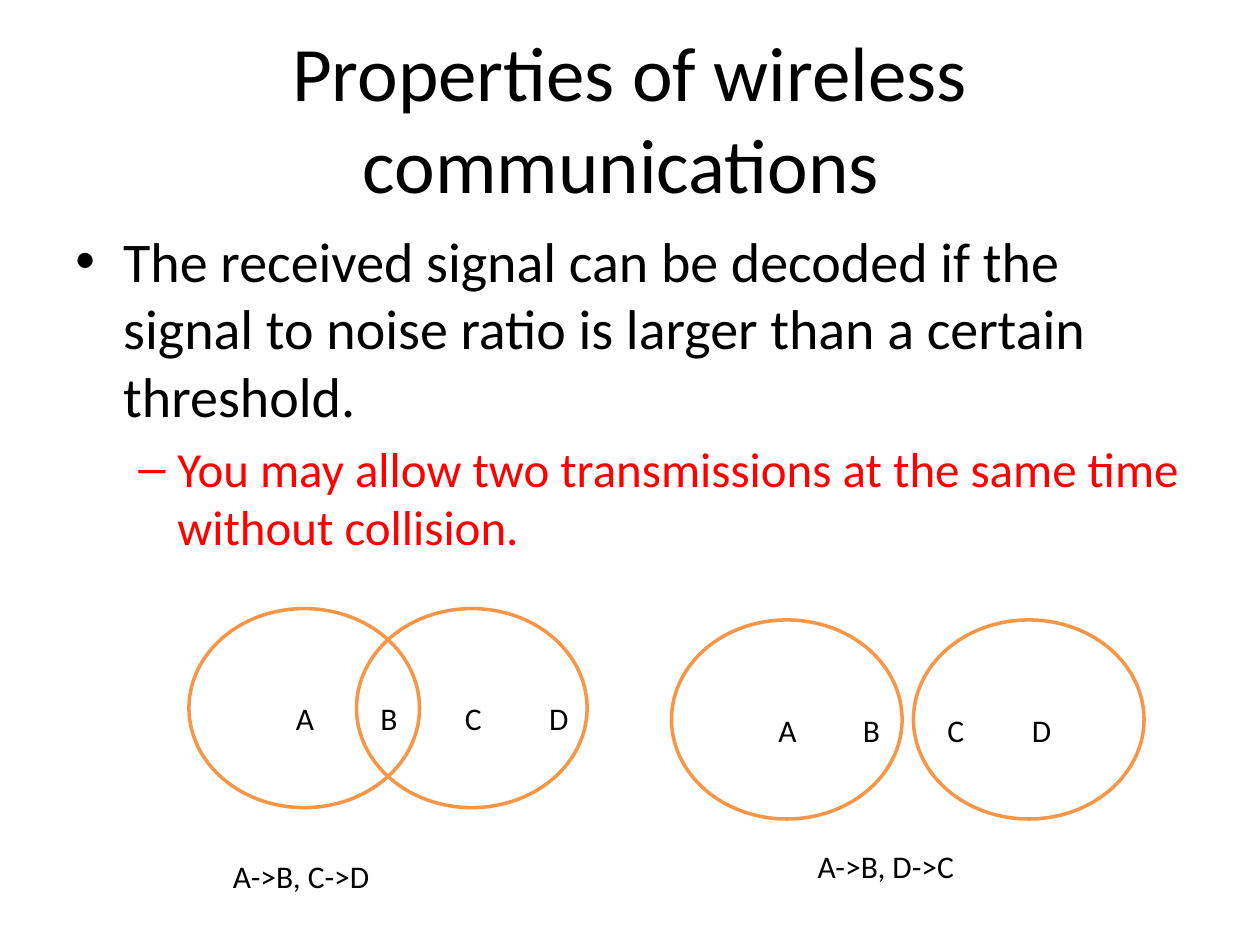
from lxml import etree
from pptx import Presentation
from pptx.dml.color import RGBColor
from pptx.enum.shapes import MSO_SHAPE
from pptx.enum.text import MSO_ANCHOR, MSO_AUTO_SIZE, PP_ALIGN
from pptx.oxml.ns import qn
from pptx.util import Inches, Pt

OVAL = MSO_SHAPE.OVAL
MIDDLE = MSO_ANCHOR.MIDDLE
GROW = MSO_AUTO_SIZE.SHAPE_TO_FIT_TEXT
CENTER = PP_ALIGN.CENTER

FONT = "Calibri"
COLORS = {"text": "000000", "alert": "FF0000", "ring": "F79646"}
TITLE = "Properties of wireless communications "
POINTS = [
    ("The received signal can be decoded if the signal to noise ratio "
     "is larger than a certain threshold.", 0, "•", 0.38, 0.38, 32, "text"),
    ("You may allow two transmissions at the same time without collision.",
     1, "–", 0.81, 0.31, 28, "alert"),
]
GROUPS = [
    {"left": 1.5, "top": 4.83, "shift": 1.33, "nodes": 2.25,
     "note": ("A->B, C->D", 1.75, 6.75)},
    {"left": 5.33, "top": 4.92, "shift": 1.92, "nodes": 6.08,
     "note": ("A->B, D->C", 6.39, 6.67)},
]
NODES = "ABCD"
RING = (1.83, 1.58)
STEP = 0.67
DROP = 0.67


def color(name):
    return RGBColor.from_string(COLORS[name])


def style(para, size, name="text"):
    para.font.name = FONT
    para.font.size = Pt(size)
    para.font.color.rgb = color(name)


def add_box(slide, left, top, width, height):
    box = slide.shapes.add_textbox(*map(Inches, (left, top, width, height)))
    box.text_frame.word_wrap = True
    return box.text_frame


def add_label(slide, text, left, top, width):
    frame = add_box(slide, left, top, width, 0.4)
    frame.word_wrap = False
    frame.auto_size = GROW
    frame.text = text
    style(frame.paragraphs[0], 18)


def add_ring(slide, left, top):
    ring = slide.shapes.add_shape(OVAL, *map(Inches, (left, top, *RING)))
    ring.shadow.inherit = False
    ring.fill.background()
    ring.line.color.rgb = color("ring")
    ring.line.width = Pt(2)


def add_bullet(para, mark, left, hang):
    props = para._p.get_or_add_pPr()
    props.set("marL", str(Inches(left)))
    props.set("indent", str(-Inches(hang)))
    etree.SubElement(props, qn("a:buFont"), typeface="Arial")
    etree.SubElement(props, qn("a:buChar"), char=mark)


def add_title(slide):
    frame = add_box(slide, 0.5, 0.3, 9, 1.25)
    frame.vertical_anchor = MIDDLE
    frame.text = TITLE
    para = frame.paragraphs[0]
    para.alignment = CENTER
    style(para, 44)


def add_points(slide):
    frame = add_box(slide, 0.5, 1.75, 9, 2.67)
    for i, (text, level, mark, left, hang, size, name) in enumerate(POINTS):
        para = frame.add_paragraph() if i else frame.paragraphs[0]
        para.text = text
        para.level = level
        para.space_before = Pt(size * 0.2)
        style(para, size, name)
        add_bullet(para, mark, left, hang)


def add_group(slide, group):
    for i in range(2):
        add_ring(slide, group["left"] + i * group["shift"], group["top"])
    for i, node in enumerate(NODES):
        add_label(slide, node, group["nodes"] + i * STEP, group["top"] + DROP, 0.35)
    add_label(slide, *group["note"], 1.36)


def main():
    deck = Presentation()
    deck.slide_width, deck.slide_height = Inches(10), Inches(7.5)
    slide = deck.slides.add_slide(deck.slide_layouts[6])
    add_title(slide)
    add_points(slide)
    for group in GROUPS:
        add_group(slide, group)
    deck.save("out.pptx")


if __name__ == "__main__":
    main()
